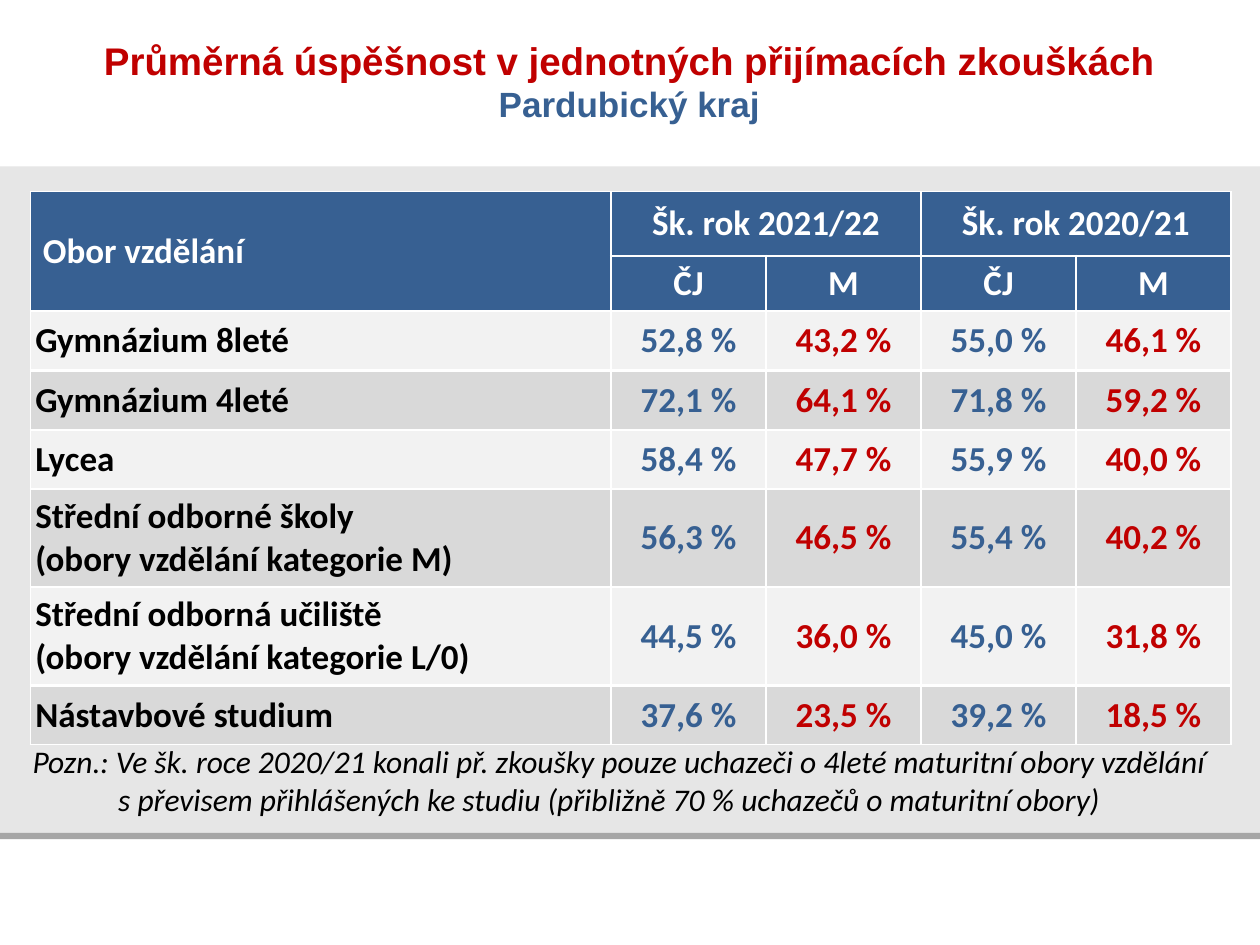
from pptx import Presentation
from pptx.dml.color import RGBColor
from pptx.enum.shapes import MSO_SHAPE
from pptx.enum.text import MSO_ANCHOR, MSO_AUTO_SIZE, PP_ALIGN
from pptx.oxml import parse_xml
from pptx.oxml.ns import nsdecls
from pptx.util import Inches, Pt

RECT = MSO_SHAPE.RECTANGLE
MIDDLE = MSO_ANCHOR.MIDDLE
LEFT, CENTER = PP_ALIGN.LEFT, PP_ALIGN.CENTER
NO_FIT = MSO_AUTO_SIZE.NONE

WHITE = RGBColor(0xFF, 0xFF, 0xFF)
BLACK = RGBColor(0, 0, 0)
BLUE = RGBColor(0x37, 0x60, 0x92)
RED = RGBColor(0xC0, 0, 0)
BACK = RGBColor(0xE6, 0xE6, 0xE6)
GRAY = RGBColor(0xA6, 0xA6, 0xA6)
LIGHT = RGBColor(0xF2, 0xF2, 0xF2)
DARK = RGBColor(0xD9, 0xD9, 0xD9)

TITLE = "Průměrná úspěšnost v jednotných přijímacích zkouškách\vPardubický kraj"
YEARS = ["Šk. rok 2021/22", "Šk. rok 2020/21"]
ROWS = [
    ("Gymnázium 8leté", "52,8", "43,2", "55,0", "46,1"),
    ("Gymnázium 4leté", "72,1", "64,1", "71,8", "59,2"),
    ("Lycea", "58,4", "47,7", "55,9", "40,0"),
    ("Střední odborné školy\n(obory vzdělání kategorie M)",
     "56,3", "46,5", "55,4", "40,2"),
    ("Střední odborná učiliště\n(obory vzdělání kategorie L/0)",
     "44,5", "36,0", "45,0", "31,8"),
    ("Nástavbové studium", "37,6", "23,5", "39,2", "18,5"),
]
NOTE = ("Pozn.: Ve šk. roce 2020/21 konali př. zkoušky pouze uchazeči "
        "o 4leté maturitní obory vzdělání\n"
        "s\u00a0převisem přihlášených ke studiu "
        "(přibližně 70 % uchazečů o maturitní obory)")
WIDTHS = [4.61] + [1.23] * 4
HEIGHTS = [0.51, 0.44, 0.47, 0.47, 0.47, 0.78, 0.78, 0.47]


def style(run, size, color, name="Calibri", bold=False, italic=False):
    font = run.font
    font.size, font.name = Pt(size), name
    font.bold, font.italic = bold, italic
    font.color.rgb = color


def add_band(slide, top, height, color):
    band = slide.shapes.add_shape(
        RECT, Inches(-0.12), Inches(top), Inches(10.24), Inches(height))
    band.shadow.inherit = False
    band.fill.solid()
    band.fill.fore_color.rgb = color
    band.line.fill.background()


def set_title(slide):
    title = slide.shapes.title
    title.left, title.top = Inches(0.51), Inches(0)
    title.width, title.height = Inches(8.97), Inches(1.28)
    frame = title.text_frame
    frame.margin_left = frame.margin_right = 0
    frame.margin_top = frame.margin_bottom = 0
    frame.vertical_anchor = MIDDLE
    frame.auto_size = NO_FIT
    par = frame.paragraphs[0]
    par.text = TITLE
    par.alignment = CENTER
    for run, size, color in zip(par.runs, (22, 20), (RED, BLUE)):
        style(run, size, color, "Arial", bold=True)
    # Bring the title in front of the bands
    slide.shapes._spTree.append(title._element)


def add_border(cell, sides):
    props = cell._tc.get_or_add_tcPr()
    for spot, side in enumerate(sides):
        props.insert(spot, parse_xml(
            f'<a:ln{side} {nsdecls("a")} w="18669"><a:solidFill>'
            f'<a:srgbClr val="{WHITE}"/></a:solidFill></a:ln{side}>'))


def fill_cell(cell, text, fill, color, align=CENTER, side=0.04):
    cell.fill.solid()
    cell.fill.fore_color.rgb = fill
    cell.vertical_anchor = MIDDLE
    cell.margin_left = cell.margin_right = Inches(side)
    cell.text_frame.text = text
    for par in cell.text_frame.paragraphs:
        par.alignment = align
        for run in par.runs:
            style(run, 20, color, bold=True)


def add_scores(slide):
    frame = slide.shapes.add_table(
        len(HEIGHTS), len(WIDTHS), Inches(0.24), Inches(1.52),
        Inches(sum(WIDTHS)), Inches(sum(HEIGHTS)))
    table = frame.table
    for col, width in zip(table.columns, WIDTHS):
        col.width = Inches(width)
    for row, height in zip(table.rows, HEIGHTS):
        row.height = Inches(height)

    # Two-level heading
    table.cell(0, 0).merge(table.cell(1, 0))
    fill_cell(table.cell(0, 0), "Obor vzdělání", BLUE, WHITE, LEFT, 0.1)
    for num, year in enumerate(YEARS):
        col = 1 + 2 * num
        table.cell(0, col).merge(table.cell(0, col + 1))
        fill_cell(table.cell(0, col), year, BLUE, WHITE, side=0.01)
        for step, name in enumerate(("ČJ", "M")):
            fill_cell(table.cell(1, col + step), name, BLUE, WHITE, side=0.01)

    # Fields and their scores
    for num, (field, *scores) in enumerate(ROWS):
        fill = DARK if num % 2 else LIGHT
        fill_cell(table.cell(num + 2, 0), field, fill, BLACK, LEFT)
        for col, score in enumerate(scores, 1):
            color = BLUE if col % 2 else RED
            fill_cell(table.cell(num + 2, col), f"{score} %", fill, color)

    # White grid, open on the outer left, top and bottom
    last = len(HEIGHTS) - 1
    for row in range(len(HEIGHTS)):
        for col in range(len(WIDTHS)):
            sides = ["L"] * (col > 0) + ["R"] + ["T"] * (row > 0)
            add_border(table.cell(row, col), sides + ["B"] * (row < last))


def add_note(slide):
    box = slide.shapes.add_textbox(
        Inches(0.16), Inches(5.84), Inches(9.61), Inches(0.7))
    frame = box.text_frame
    frame.word_wrap = True
    frame.text = NOTE
    for par in frame.paragraphs:
        style(par.runs[0], 18, BLACK, italic=True)
    # Indent the second line
    props = frame.paragraphs[1]._p.get_or_add_pPr()
    props.set("marL", str(Inches(0.68)))


def main():
    deck = Presentation()
    deck.slide_width, deck.slide_height = Inches(10), Inches(7.5)
    slide = deck.slides.add_slide(deck.slide_layouts[5])
    slide.background.fill.solid()
    slide.background.fill.fore_color.rgb = BACK
    # Footer, its rule and header
    add_band(slide, 6.66, 0.87, WHITE)
    add_band(slide, 6.61, 0.05, GRAY)
    add_band(slide, 0, 1.32, WHITE)
    set_title(slide)
    add_scores(slide)
    add_note(slide)
    deck.save("out.pptx")


if __name__ == "__main__":
    main()
